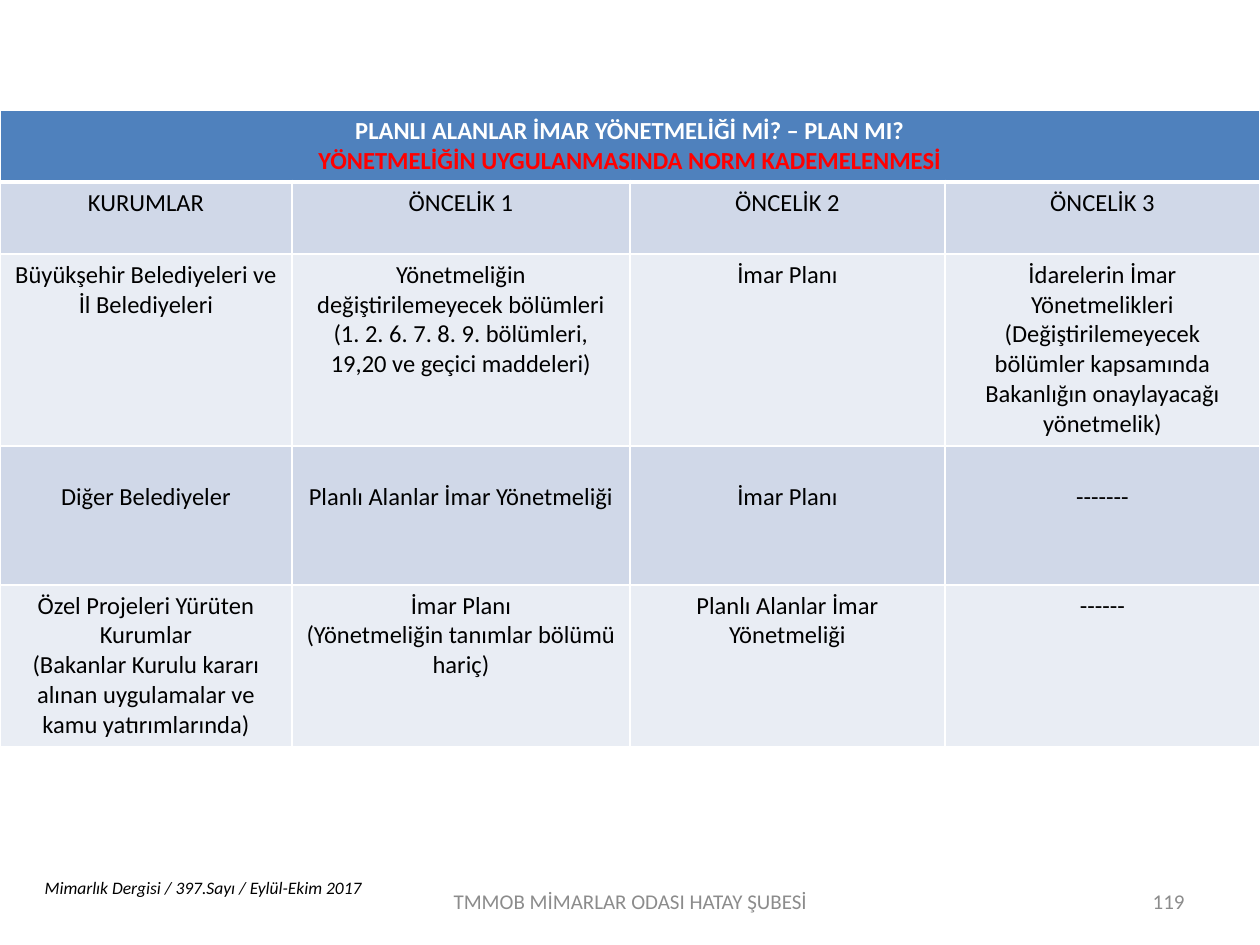
"""Build the slide on the order of precedence between zoning rules and plans."""
from dataclasses import dataclass

import lxml.etree
import pptx
import pptx.dml.color
import pptx.enum.text
import pptx.oxml.ns
import pptx.util

EMU_PER_PX = 914400 / 126
ALIGN = pptx.enum.text.PP_ALIGN
ANCHOR = pptx.enum.text.MSO_ANCHOR


@dataclass(frozen=True)
class Theme:
    font: str = "Calibri"
    white: str = "FFFFFF"
    black: str = "000000"
    red: str = "FF0000"
    gray: str = "8C8C8C"
    header: str = "4F81BD"
    bands: tuple[str, str] = ("D0D8E8", "E9EDF4")
    table_size: int = 14
    footer_size: int = 12
    source_size: int = 10
    thin_line: int = 1
    thick_line: int = 3


@dataclass(frozen=True)
class Row:
    height: int
    cells: tuple[str, ...]
    top_margin: int = 6


@dataclass(frozen=True)
class Label:
    text: str
    left: int
    top: int
    width: int
    height: int
    size: int
    color: str
    align: ALIGN
    anchor: ANCHOR = ANCHOR.MIDDLE
    italic: bool = False


THEME = Theme()
TABLE_TOP = 110
COLUMN_WIDTHS = (292, 338, 315, 315)
ROWS = (
    Row(72, ("PLANLI ALANLAR İMAR YÖNETMELİĞİ Mİ? – PLAN MI?\n"
             "YÖNETMELİĞİN UYGULANMASINDA NORM KADEMELENMESİ",)),
    Row(72, ("KURUMLAR", "ÖNCELİK 1", "ÖNCELİK 2", "ÖNCELİK 3")),
    Row(192, (
        "Büyükşehir Belediyeleri ve\nİl Belediyeleri",
        "Yönetmeliğin değiştirilemeyecek bölümleri\n"
        "(1. 2. 6. 7. 8. 9. bölümleri, 19,20 ve geçici maddeleri)",
        "İmar Planı",
        "İdarelerin İmar Yönetmelikleri\n"
        "(Değiştirilemeyecek bölümler kapsamında Bakanlığın onaylayacağı yönetmelik)",
    )),
    Row(139, ("Diğer Belediyeler", "Planlı Alanlar İmar Yönetmeliği",
              "İmar Planı", "-------"), top_margin=36),
    Row(162, (
        "Özel Projeleri Yürüten Kurumlar\n"
        "(Bakanlar Kurulu kararı alınan uygulamalar ve kamu yatırımlarında)",
        "İmar Planı\n(Yönetmeliğin tanımlar bölümü hariç)",
        "Planlı Alanlar İmar Yönetmeliği",
        "------",
    )),
)
LABELS = (
    Label("Mimarlık Dergisi / 397.Sayı / Eylül-Ekim 2017", -15, 871, 436, 34,
          THEME.source_size, THEME.black, ALIGN.CENTER, ANCHOR.TOP, italic=True),
    Label("119", 903, 876, 294, 50, THEME.footer_size, THEME.gray, ALIGN.RIGHT),
    Label("TMMOB MİMARLAR ODASI HATAY ŞUBESİ", 431, 876, 399, 50,
          THEME.footer_size, THEME.gray, ALIGN.CENTER),
)


def px(length: int) -> pptx.util.Emu:
    return pptx.util.Emu(round(length * EMU_PER_PX))


def rgb(color: str) -> pptx.dml.color.RGBColor:
    return pptx.dml.color.RGBColor.from_string(color)


def style_text(frame, size: int, color: str, align: ALIGN,
               bold: bool = False, italic: bool = False) -> None:
    for paragraph in frame.paragraphs:
        paragraph.alignment = align
        for span in paragraph.runs:
            span.font.name = THEME.font
            span.font.size = pptx.util.Pt(size)
            span.font.bold = bold
            span.font.italic = italic
            span.font.color.rgb = rgb(color)


def add_borders(cell, top: int, bottom: int) -> None:
    properties = cell._tc.get_or_add_tcPr()
    widths = {"lnL": THEME.thin_line, "lnR": THEME.thin_line, "lnT": top, "lnB": bottom}
    for index, (side, width) in enumerate(widths.items()):
        line = lxml.etree.Element(pptx.oxml.ns.qn(f"a:{side}"), w=str(pptx.util.Pt(width)))
        fill = lxml.etree.SubElement(line, pptx.oxml.ns.qn("a:solidFill"))
        lxml.etree.SubElement(fill, pptx.oxml.ns.qn("a:srgbClr"), val=THEME.white)
        properties.insert(index, line)


def add_priority_table(page) -> None:
    frame = page.shapes.add_table(
        len(ROWS), len(COLUMN_WIDTHS), px(0), px(TABLE_TOP),
        px(sum(COLUMN_WIDTHS)), px(sum(row.height for row in ROWS)))
    table = frame.table
    for column, width in zip(table.columns, COLUMN_WIDTHS):
        column.width = px(width)
    table.cell(0, 0).merge(table.cell(0, len(COLUMN_WIDTHS) - 1))
    for row_index, row in enumerate(ROWS):
        table.rows[row_index].height = px(row.height)
        is_header = row_index == 0
        for column_index in range(len(COLUMN_WIDTHS)):
            cell = table.cell(row_index, column_index)
            cell.margin_top = px(row.top_margin)
            cell.fill.solid()
            cell.fill.fore_color.rgb = rgb(
                THEME.header if is_header else THEME.bands[(row_index - 1) % 2])
            add_borders(cell,
                        THEME.thick_line if row_index == 1 else THEME.thin_line,
                        THEME.thick_line if is_header else THEME.thin_line)
            if column_index < len(row.cells):
                cell.text_frame.text = row.cells[column_index]
                style_text(cell.text_frame, THEME.table_size,
                           THEME.white if is_header else THEME.black,
                           ALIGN.CENTER, bold=is_header)
    subtitle = table.cell(0, 0).text_frame.paragraphs[1]
    subtitle.runs[0].font.color.rgb = rgb(THEME.red)


def add_label(page, label: Label) -> None:
    box = page.shapes.add_textbox(
        px(label.left), px(label.top), px(label.width), px(label.height))
    frame = box.text_frame
    frame.word_wrap = True
    frame.vertical_anchor = label.anchor
    frame.text = label.text
    style_text(frame, label.size, label.color, label.align, italic=label.italic)


def main() -> None:
    deck = pptx.Presentation()
    deck.slide_width = px(1260)
    deck.slide_height = px(945)
    page = deck.slides.add_slide(deck.slide_layouts[6])
    add_priority_table(page)
    for label in LABELS:
        add_label(page, label)
    deck.save("out.pptx")


if __name__ == "__main__":
    main()
